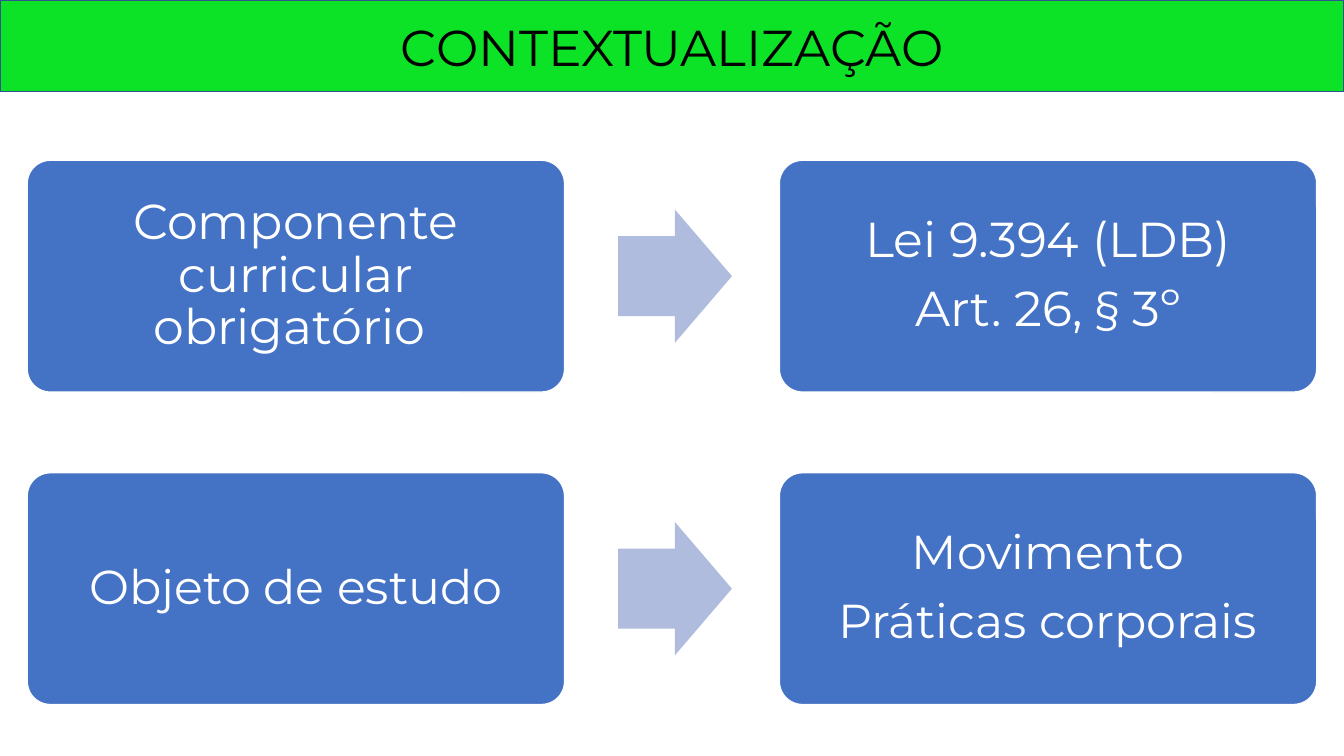
"""Build the CONTEXTUALIZAÇÃO slide: two rows of boxes joined by block arrows."""
from pptx import Presentation
from pptx import util as u
from pptx.dml import color
from pptx.enum import shapes, text

COLORS = {"banner": "0DE326", "banner_line": "31538F", "box": "4472C4",
          "arrow": "B0BCDE", "white": "FFFFFF", "black": "000000"}
ROWS = [(1.59, 35, 0.15, ["Componente curricular obrigatório "],
         ["Lei 9.394 (LDB)", "Art. 26, § 3º"]),
        (4.69, 34, 0.14, ["Objeto de estudo"],
         ["Movimento", "Práticas corporais"])]
BOX_W, BOX_H = 5.33, 2.3
ARROW_W, ARROW_H = 1.13, 1.32


def add_block(kind, left, top, width, height, fill, line=None):
    sp = s.shapes.add_shape(kind, u.Inches(left), u.Inches(top),
                            u.Inches(width), u.Inches(height))
    sp.shadow.inherit = False
    sp.fill.solid()
    sp.fill.fore_color.rgb = color.RGBColor.from_string(COLORS[fill])
    if line:
        sp.line.color.rgb = color.RGBColor.from_string(COLORS[line])
        sp.line.width = u.Pt(1)
    else:
        sp.line.fill.background()
    return sp


def write_lines(sp, lines, size, font_color):
    tf = sp.text_frame
    tf.word_wrap = True
    tf.vertical_anchor = text.MSO_ANCHOR.MIDDLE
    tf.text = "\n".join(lines)
    for p in tf.paragraphs:
        p.alignment = text.PP_ALIGN.CENTER
        r = p.runs[0]
        r.font.name = "Montserrat"
        r.font.size = u.Pt(size)
        r.font.color.rgb = color.RGBColor.from_string(COLORS[font_color])
    return tf


prs = Presentation()
prs.slide_width, prs.slide_height = u.Inches(13.33), u.Inches(7.5)
s = prs.slides.add_slide(prs.slide_layouts[6])

banner = add_block(shapes.MSO_SHAPE.RECTANGLE, 0, 0, 13.33, 0.91,
                   "banner", "banner_line")
write_lines(banner, ["CONTEXTUALIZAÇÃO"], 36, "black")

for top, size, inset, topic, detail in ROWS:
    for left, lines in ((0.27, topic), (7.73, detail)):
        box = add_block(shapes.MSO_SHAPE.ROUNDED_RECTANGLE, left, top,
                        BOX_W, BOX_H, "box", "white")
        box.adjustments[0] = 0.1
        tf = write_lines(box, lines, size, "white")
        tf.margin_left = tf.margin_right = u.Inches(inset)
        tf.margin_top = tf.margin_bottom = u.Inches(inset)
        for p in tf.paragraphs:
            p.line_spacing = 0.9
            p.space_after = u.Pt(12)

    arrow = add_block(shapes.MSO_SHAPE.RIGHT_ARROW, 6.13,
                      top + (BOX_H - ARROW_H) / 2, ARROW_W, ARROW_H, "arrow")
    arrow.adjustments[0] = 0.6
    arrow.adjustments[1] = 0.5

prs.save("out.pptx")
